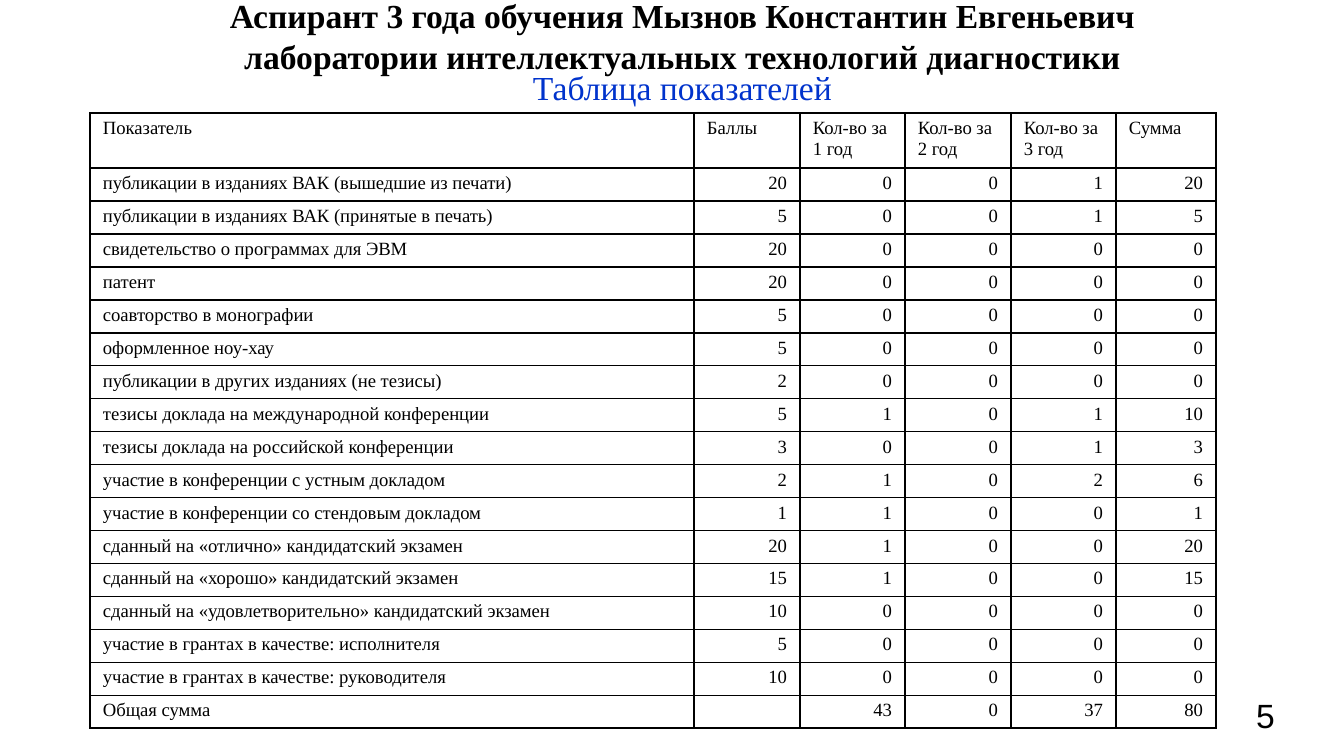
from lxml.etree import SubElement
from pptx import Presentation
from pptx.dml.color import RGBColor
from pptx.enum.text import MSO_ANCHOR, MSO_AUTO_SIZE, PP_ALIGN
from pptx.oxml.ns import qn
from pptx.util import Emu, Pt

EMU_PER_PX = 914400 / 134.4

HEADING = ("Аспирант 3 года обучения Мызнов Константин Евгеньевич\v"
           "лаборатории интеллектуальных технологий диагностики")
HEADER = ["Показатель", "Баллы", "Кол-во за 1 год", "Кол-во за 2 год",
          "Кол-во за 3 год", "Сумма"]
INDICATORS = [
    ("публикации в изданиях ВАК (вышедшие из печати)", 20, 0, 0, 1, 20),
    ("публикации в изданиях ВАК (принятые в печать)", 5, 0, 0, 1, 5),
    ("свидетельство о программах для ЭВМ", 20, 0, 0, 0, 0),
    ("патент", 20, 0, 0, 0, 0),
    ("соавторство в монографии", 5, 0, 0, 0, 0),
    ("оформленное ноу-хау", 5, 0, 0, 0, 0),
    ("публикации в других изданиях (не тезисы)", 2, 0, 0, 0, 0),
    ("тезисы доклада на международной конференции", 5, 1, 0, 1, 10),
    ("тезисы доклада на российской конференции", 3, 0, 0, 1, 3),
    ("участие в конференции с устным докладом", 2, 1, 0, 2, 6),
    ("участие в конференции со стендовым докладом", 1, 1, 0, 0, 1),
    ("сданный на «отлично» кандидатский экзамен", 20, 1, 0, 0, 20),
    ("сданный на «хорошо» кандидатский экзамен", 15, 1, 0, 0, 15),
    ("сданный на «удовлетворительно» кандидатский экзамен", 10, 0, 0, 0, 0),
    ("участие в грантах в качестве: исполнителя", 5, 0, 0, 0, 0),
    ("участие в грантах в качестве: руководителя", 10, 0, 0, 0, 0),
    ("Общая сумма", "", 43, 0, 37, 80),
]
COLUMN_WIDTHS = [604, 106, 105, 106, 105, 100]
HEADER_HEIGHT, ROW_HEIGHT = 53, 33


def px(length):
    return Emu(round(length * EMU_PER_PX))


def color(hex_code):
    return RGBColor.from_string(hex_code)


class ReportSlide:
    serif, sans = "Times New Roman", "Arial"
    black, blue = "000000", "0033CC"
    heading_size, table_size = 18, 10

    def __init__(self, deck):
        self.slide = deck.slides.add_slide(deck.slide_layouts[0])

    def style_text(self, frame, size, font, ink, align, bold=False):
        for paragraph in frame.paragraphs:
            paragraph.alignment = align
            for run in paragraph.runs:
                run.font.size, run.font.name = Pt(size), font
                run.font.bold = bold
                run.font.color.rgb = color(ink)

    def placeholder(self, index, text, box, ink, anchor, margins, bold=False):
        holder = self.slide.placeholders[index]
        holder.left, holder.top, holder.width, holder.height = map(px, box)
        frame = holder.text_frame
        frame.text = text
        frame.auto_size = MSO_AUTO_SIZE.NONE
        frame.vertical_anchor = anchor
        frame.margin_left = frame.margin_right = px(margins[0])
        frame.margin_top = frame.margin_bottom = px(margins[1])
        self.style_text(frame, self.heading_size, self.serif, ink,
                        PP_ALIGN.CENTER, bold)
        return frame.paragraphs[0]

    def page_number(self, text, box):
        frame = self.slide.shapes.add_textbox(*map(px, box)).text_frame
        frame.word_wrap = True
        frame.text = text
        self.style_text(frame, self.heading_size, self.sans, self.black,
                        PP_ALIGN.LEFT)

    def border(self, cell):
        """Draw a 1 pt line on all four sides; must precede the cell fill."""
        properties = cell._tc.get_or_add_tcPr()
        for side in ("a:lnL", "a:lnR", "a:lnT", "a:lnB"):
            line = SubElement(properties, qn(side), w=str(Pt(1)))
            fill = SubElement(line, qn("a:solidFill"))
            SubElement(fill, qn("a:srgbClr"), val=self.black)

    def table(self, rows, left, top):
        heights = [HEADER_HEIGHT] + [ROW_HEIGHT] * (len(rows) - 1)
        table = self.slide.shapes.add_table(
            len(rows), len(COLUMN_WIDTHS), px(left), px(top),
            px(sum(COLUMN_WIDTHS)), px(sum(heights))).table
        table.first_row = table.horz_banding = False
        for column, width in zip(table.columns, COLUMN_WIDTHS):
            column.width = px(width)
        for row, height in zip(table.rows, heights):
            row.height = px(height)
        for r, values in enumerate(rows):
            for c, value in enumerate(values):
                cell = table.cell(r, c)
                self.border(cell)
                cell.fill.background()
                cell.margin_left = cell.margin_right = px(13)
                cell.margin_top = cell.margin_bottom = px(5)
                cell.text = str(value)
                align = PP_ALIGN.RIGHT if r and c else PP_ALIGN.LEFT
                self.style_text(cell.text_frame, self.table_size, self.serif,
                                self.black, align)
                # An empty cell would otherwise stretch its row
                cell.text_frame.paragraphs[0].font.size = Pt(self.table_size)


def main():
    deck = Presentation()
    deck.slide_width, deck.slide_height = px(1344), px(756)
    report = ReportSlide(deck)
    subtitle = report.placeholder(1, "Таблица показателей", (79, 60, 1207, 42),
                                  report.blue, MSO_ANCHOR.TOP, (13, 7))
    subtitle.space_before = Pt(6)
    report.placeholder(0, HEADING, (79, 0, 1207, 71), report.black,
                       MSO_ANCHOR.MIDDLE, (0, 0), bold=True)
    report.page_number("5", (1243, 688, 32, 52))
    report.table([HEADER] + INDICATORS, 90, 113)
    deck.save("out.pptx")


if __name__ == "__main__":
    main()
